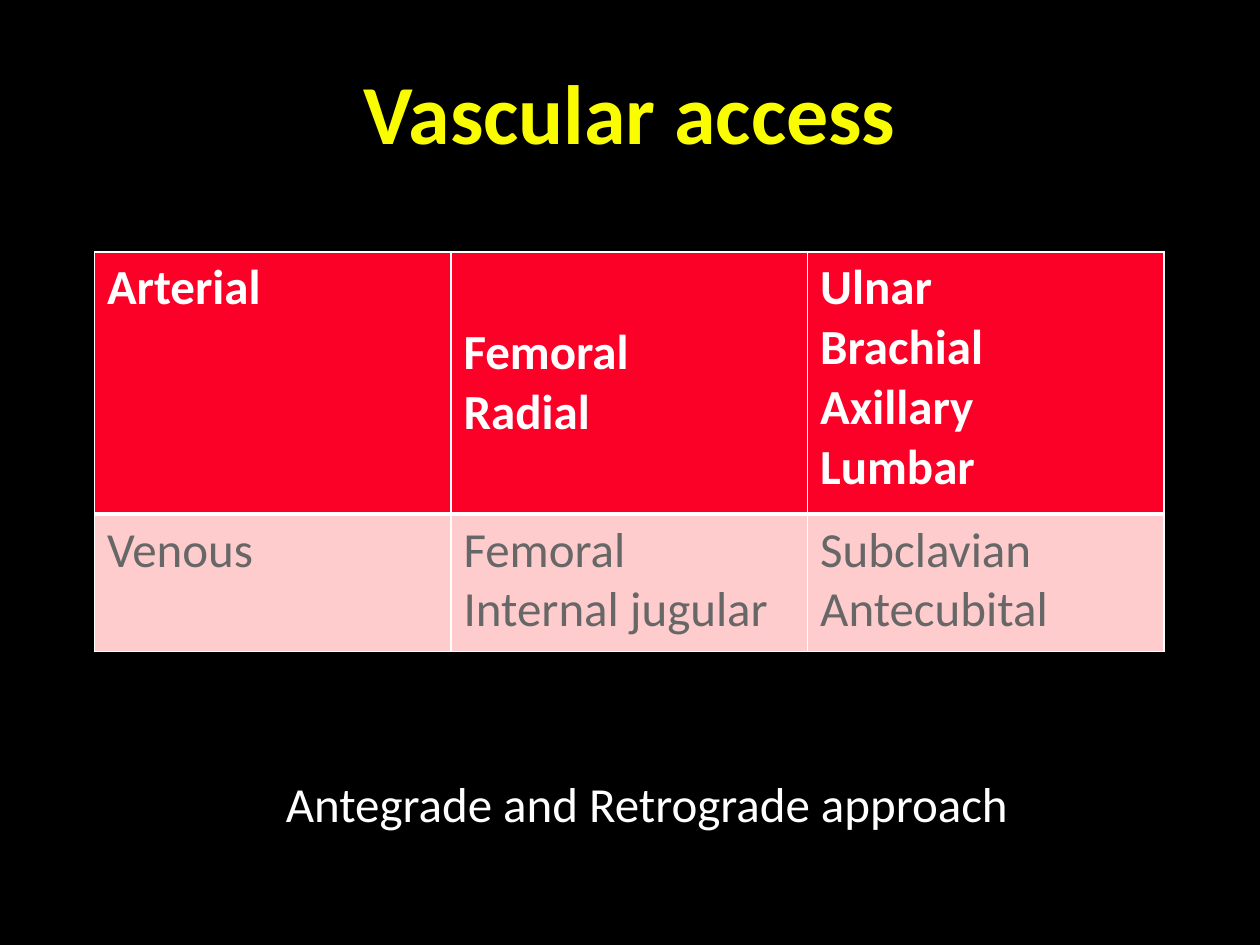
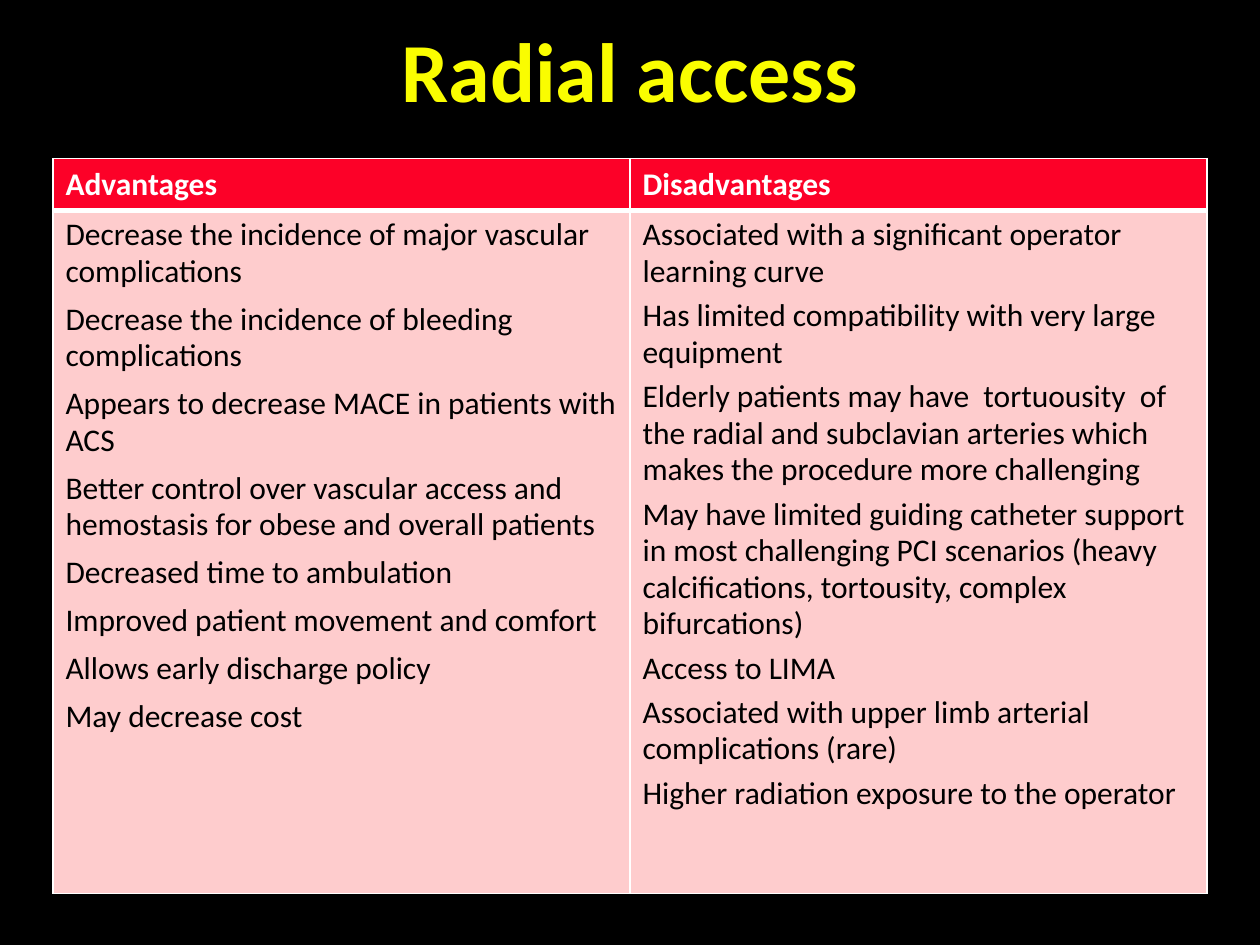
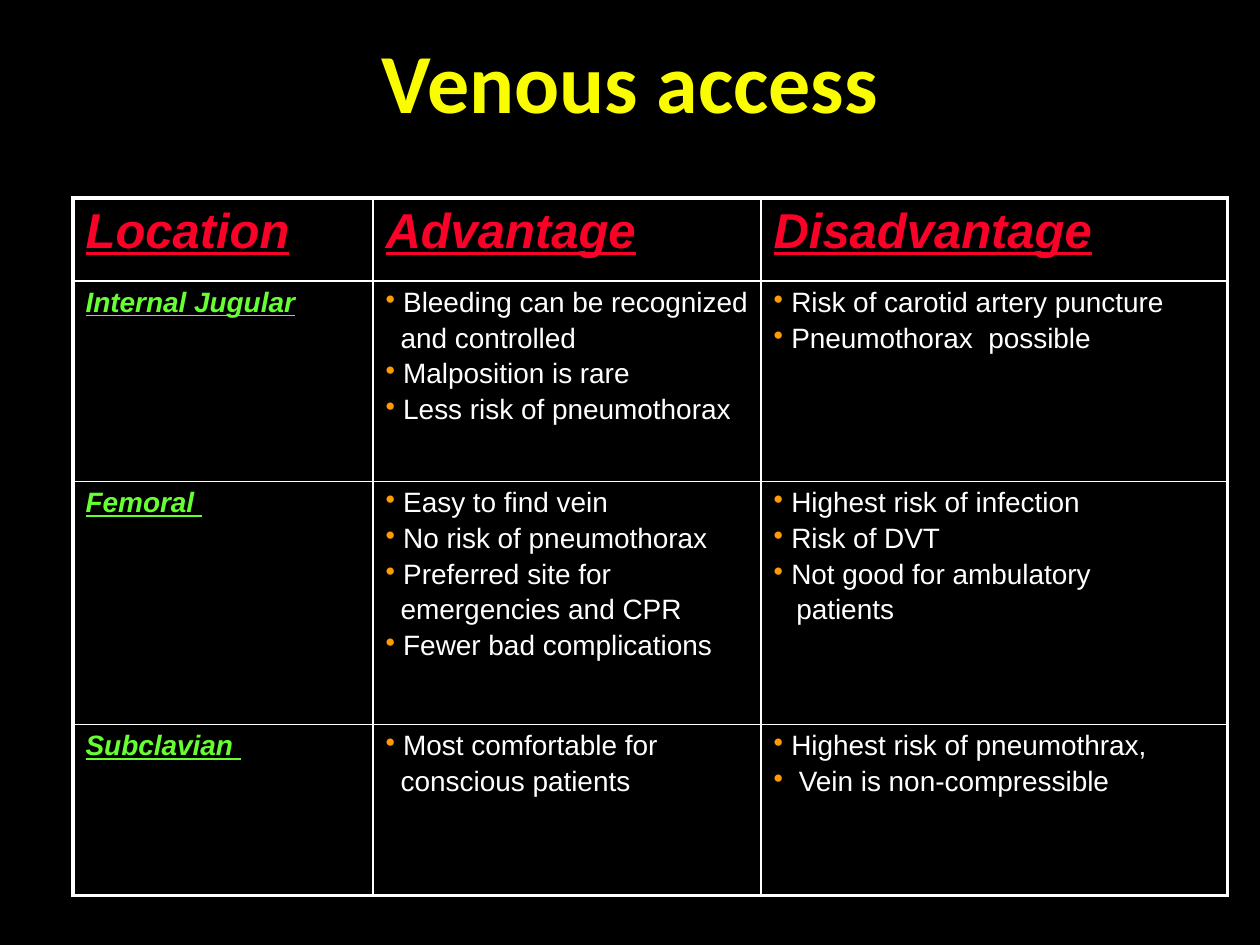
from dataclasses import dataclass
from lxml import etree
from pptx import Presentation
from pptx.dml.color import RGBColor
from pptx.enum import text as t
from pptx.oxml import ns
from pptx.util import Inches, Pt


@dataclass(frozen=True)
class Theme:
    black: str = "000000"
    white: str = "FFFFFF"
    yellow: str = "FAFD00"
    red: str = "FC0128"
    pink: str = "FECCCD"
    gray: str = "676767"
    green: str = "66FF33"
    orange: str = "FE9B03"
    sans: str = "Calibri"
    grotesque: str = "Arial"
    title: int = 48
    large: int = 28
    body: int = 18
    small: int = 16


theme = Theme()


def write(frame, lines, size, color, font=theme.sans, bold=False, slanted=False,
          gap=0, leading=1.0):
    for index, line in enumerate(lines):
        paragraph = frame.add_paragraph() if index else frame.paragraphs[0]
        paragraph.line_spacing = leading
        paragraph.space_before = Pt(gap if index else 0)
        run = paragraph.add_run()
        run.text = line
        run.font.name = font
        run.font.size = Pt(size)
        run.font.bold = bold
        run.font.italic = slanted
        run.font.underline = slanted
        run.font.color.rgb = RGBColor.from_string(color)


def add_table_slide(title, title_top, title_height, origin, widths, heights, fills,
                    outer=1, header_rule=1):
    slide = deck.slides.add_slide(deck.slide_layouts[6])
    heading = slide.shapes.add_textbox(
        Inches(0.75), Inches(title_top), Inches(8.5), Inches(title_height)).text_frame
    heading.word_wrap = True
    heading.vertical_anchor = t.MSO_ANCHOR.MIDDLE
    write(heading, [title], theme.title, theme.yellow, bold=True)
    heading.paragraphs[0].alignment = t.PP_ALIGN.CENTER

    left, top = origin
    table = slide.shapes.add_table(
        len(heights), len(widths), Inches(left), Inches(top),
        Inches(sum(widths)), Inches(sum(heights))).table
    table.first_row = table.horz_banding = False
    for column, width in zip(table.columns, widths):
        column.width = Inches(width)
    for r, height in enumerate(heights):
        table.rows[r].height = Inches(height)
        for c in range(len(widths)):
            cell = table.cell(r, c)
            edges = {
                "lnL": 1 if c else outer,
                "lnR": 1 if c < len(widths) - 1 else outer,
                "lnT": (outer, header_rule)[r] if r < 2 else 1,
                "lnB": outer if r == len(heights) - 1 else 1 if r else header_rule,
            }
            properties = cell._tc.get_or_add_tcPr()
            for edge, points in edges.items():
                line = etree.SubElement(properties, ns.qn(f"a:{edge}"), w=str(Pt(points)))
                paint = etree.SubElement(line, ns.qn("a:solidFill"))
                etree.SubElement(paint, ns.qn("a:srgbClr"), val=theme.white)
            cell.fill.solid()
            cell.fill.fore_color.rgb = RGBColor.from_string(fills[r])
    return slide, table


deck = Presentation()
deck.slide_width, deck.slide_height = Inches(10), Inches(7.5)
backdrop = deck.slide_master.background.fill
backdrop.solid()
backdrop.fore_color.rgb = RGBColor.from_string(theme.black)

vessels = [
    [["Arterial"], ["Femoral", "Radial"], ["Ulnar", "Brachial", "Axillary", "Lumbar"]],
    [["Venous"], ["Femoral", "Internal jugular"], ["Subclavian", "Antecubital"]],
]
vascular, routes = add_table_slide(
    "Vascular access", 0.42, 0.92, (0.75, 2), [2.83] * 3, [2.08, 1.09],
    [theme.red, theme.pink], header_rule=3)
for r, row in enumerate(vessels):
    for c, names in enumerate(row):
        write(routes.cell(r, c).text_frame, names, theme.large,
              theme.gray if r else theme.white, bold=r == 0)
routes.cell(0, 1).vertical_anchor = t.MSO_ANCHOR.MIDDLE
approach = vascular.shapes.add_textbox(
    Inches(2.17), Inches(6.09), Inches(6), Inches(0.57)).text_frame
approach.word_wrap = True
write(approach, ["Antegrade and Retrograde approach"], theme.large, theme.white)

radial_points = [
    ("Advantages", 6.5, [
        "Decrease the incidence of major vascular complications",
        "Decrease the incidence of bleeding complications",
        "Appears to decrease MACE in patients with ACS",
        "Better control over vascular access and hemostasis for obese and overall patients",
        "Decreased time to ambulation",
        "Improved patient movement and comfort",
        "Allows early discharge policy",
        "May decrease cost",
    ]),
    ("Disadvantages", 4.5, [
        "Associated with a significant operator learning curve",
        "Has limited compatibility with very large equipment",
        "Elderly patients may have  tortuousity  of the radial and subclavian arteries "
        "which makes the procedure more challenging",
        "May have limited guiding catheter support in most challenging PCI scenarios "
        "(heavy calcifications, tortousity, complex bifurcations)",
        "Access to LIMA",
        "Associated with upper limb arterial complications (rare)",
        "Higher radiation exposure to the operator",
    ]),
]
radial, tradeoffs = add_table_slide(
    "Radial access", 0.17, 0.75, (0.42, 1.26), [4.58] * 2, [0.41, 5.42],
    [theme.red, theme.pink], header_rule=3)
for c, (side, gap, points) in enumerate(radial_points):
    write(tradeoffs.cell(0, c).text_frame, [side], theme.body, theme.white, bold=True)
    write(tradeoffs.cell(1, c).text_frame, points, theme.body, theme.black,
          gap=gap, leading=0.95)

venous_sites = [
    ("Internal Jugular",
     ["Bleeding can be recognized", "and controlled", "Malposition is rare",
      "Less risk of pneumothorax"],
     ["Risk of carotid artery puncture", "Pneumothorax  possible"]),
    ("Femoral ",
     ["Easy to find vein", "No risk of pneumothorax", "Preferred site for",
      "emergencies and CPR", "Fewer bad complications"],
     ["Highest risk of infection", "Risk of DVT", "Not good for ambulatory", "patients"]),
    ("Subclavian ",
     ["Most comfortable for", "conscious patients"],
     ["Highest risk of pneumothrax,", "Vein is non-compressible"]),
]
wider_indents = {"patients": 0.18, "Vein is non-compressible": 0.2}
venous, sites = add_table_slide(
    "Venous access", 0.17, 0.92, (0.58, 1.57), [2.38, 3.08, 3.7],
    [0.66, 1.59, 1.93, 1.36], [theme.black] * 4, outer=2.25)
for c, label in enumerate(["Location", "Advantage", "Disadvantage"]):
    write(sites.cell(0, c).text_frame, [label], theme.large, theme.red,
          theme.grotesque, bold=True, slanted=True)
for r, (location, *remarks) in enumerate(venous_sites, 1):
    write(sites.cell(r, 0).text_frame, [location], theme.small, theme.green,
          theme.grotesque, bold=True, slanted=True)
    for c, points in enumerate(remarks, 1):
        frame = sites.cell(r, c).text_frame
        write(frame, points, theme.small, theme.white, theme.grotesque, gap=2.6)
        for point, paragraph in zip(points, frame.paragraphs):
            starts_item = point[0].isupper()
            indent = Inches(wider_indents.get(point, 0.14 if starts_item else 0.12))
            properties = paragraph._p.get_or_add_pPr()
            properties.set("marL", str(indent))
            properties.set("indent", str(-indent if starts_item else 0))
            if starts_item:
                tint = etree.SubElement(properties, ns.qn("a:buClr"))
                etree.SubElement(tint, ns.qn("a:srgbClr"), val=theme.orange)
                etree.SubElement(properties, ns.qn("a:buChar"), char="•")

deck.save("out.pptx")
